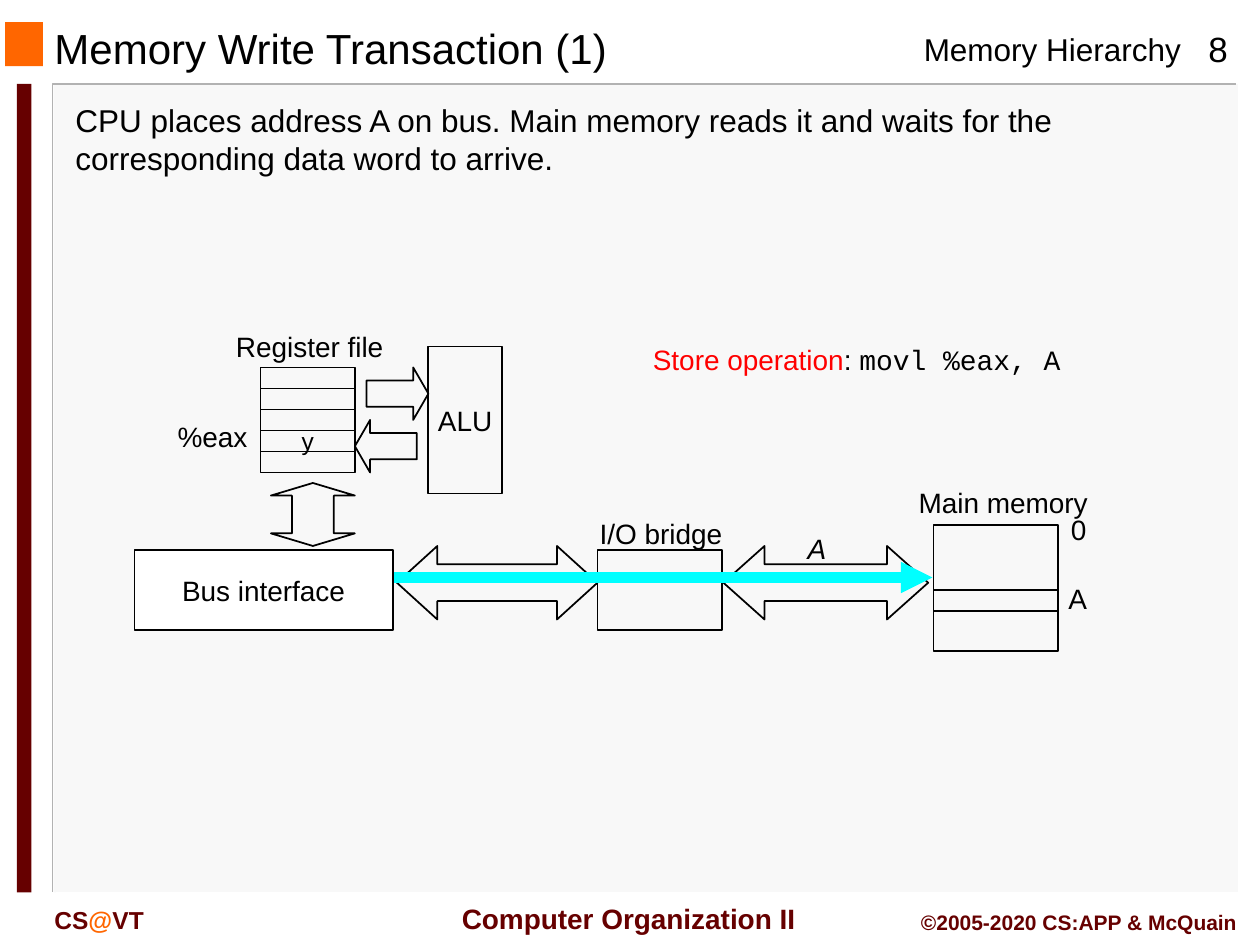
from dataclasses import dataclass
from typing import Optional

import pptx
import pptx.dml.color
import pptx.enum.shapes
import pptx.enum.text
import pptx.oxml
import pptx.oxml.ns
import pptx.util

COLORS = {"black": "000000", "white": "FFFFFF", "panel": "F8F8F8", "edge": "B2B2B2",
          "orange": "FF6600", "maroon": "660000", "red": "FF0000", "signal": "00FFFF"}
KIND = pptx.enum.shapes.MSO_SHAPE
ALIGN = pptx.enum.text.PP_ALIGN
ANCHOR = pptx.enum.text.MSO_ANCHOR

deck = pptx.Presentation()
deck.slide_width = pptx.util.Inches(10)
deck.slide_height = pptx.util.Inches(7.5)
slide = deck.slides.add_slide(deck.slide_layouts[6])

# The grid has 120 columns and 90 rows
COLUMN = deck.slide_width / 120
ROW = deck.slide_height / 90


@dataclass(frozen=True)
class Area:
    col: float
    row: float
    cols: float
    rows: float

    def emu(self) -> tuple[int, ...]:
        return (round(self.col * COLUMN), round(self.row * ROW),
                round(self.cols * COLUMN), round(self.rows * ROW))


@dataclass(frozen=True)
class Run:
    text: str
    size: float = 16
    color: str = "black"
    bold: bool = False
    italic: bool = False
    font: str = "Arial"


@dataclass(frozen=True)
class Label:
    area: Area
    runs: tuple[Run, ...]
    align: ALIGN = ALIGN.CENTER
    anchor: ANCHOR = ANCHOR.MIDDLE
    wrap: bool = False


@dataclass(frozen=True)
class Block:
    area: Area
    kind: KIND = KIND.RECTANGLE
    fill: Optional[str] = None
    line: Optional[str] = "black"
    adjust: tuple[float, ...] = ()
    caption: Optional[Run] = None


def rgb(name: str) -> pptx.dml.color.RGBColor:
    return pptx.dml.color.RGBColor.from_string(COLORS[name])


def paint(part, fill: Optional[str], line: Optional[str]) -> None:
    part.shadow.inherit = False
    if fill:
        part.fill.solid()
        part.fill.fore_color.rgb = rgb(fill)
    else:
        part.fill.background()
    if line:
        part.line.color.rgb = rgb(line)
        part.line.width = pptx.util.Pt(1)
    else:
        part.line.fill.background()


def write(frame, label: Label) -> None:
    frame.word_wrap = label.wrap
    frame.vertical_anchor = label.anchor
    paragraph = frame.paragraphs[0]
    paragraph.alignment = label.align
    for item in label.runs:
        run = paragraph.add_run()
        run.text = item.text
        run.font.name = item.font
        run.font.size = pptx.util.Pt(item.size)
        run.font.bold = item.bold
        run.font.italic = item.italic
        run.font.color.rgb = rgb(item.color)


def draw_label(label: Label) -> None:
    write(slide.shapes.add_textbox(*label.area.emu()).text_frame, label)


def draw_block(block: Block) -> None:
    part = slide.shapes.add_shape(block.kind, *block.area.emu())
    for index, value in enumerate(block.adjust):
        part.adjustments[index] = value
    if len(block.adjust) > 1:
        # python-pptx names both guides of the up-down arrow adj1
        guides = part._element.spPr.iter(pptx.oxml.ns.qn("a:gd"))
        for number, guide in enumerate(guides, start=1):
            guide.set("name", f"adj{number}")
    paint(part, block.fill, block.line)
    if block.caption:
        write(part.text_frame, Label(block.area, (block.caption,)))


def draw_edge(points: list[tuple[float, float]], color: str) -> None:
    corners = [(round(col * COLUMN), round(row * ROW)) for col, row in points]
    builder = slide.shapes.build_freeform(*corners[0])
    builder.add_line_segments(corners[1:], close=False)
    paint(builder.convert_to_shape(), None, color)


def draw_signal(start: tuple[float, float], end: tuple[float, float]) -> None:
    signal = slide.shapes.add_connector(
        pptx.enum.shapes.MSO_CONNECTOR.STRAIGHT,
        round(start[0] * COLUMN), round(start[1] * ROW),
        round(end[0] * COLUMN), round(end[1] * ROW))
    signal.line.color.rgb = rgb("signal")
    signal.line.width = pptx.util.Pt(6)
    namespace = pptx.oxml.ns.nsdecls("a")
    signal.line._get_or_add_ln().append(
        pptx.oxml.parse_xml(f'<a:tailEnd {namespace} type="triangle"/>'))
    signal._element.spPr.append(pptx.oxml.parse_xml(f"<a:effectLst {namespace}/>"))


# Page frame
draw_block(Block(Area(5.1, 8, 112.8, 77), fill="panel", line=None))
draw_edge([(117.7, 8), (5, 8), (5, 85)], "edge")
draw_edge([(118, 8), (118, 85), (5.3, 85)], "white")
draw_block(Block(Area(0.5, 2.1, 3.6, 4.2), fill="orange", line=None))
draw_block(Block(Area(1.6, 8, 1.4, 77), fill="maroon", line=None))

# Header, footer and body text
PAGE_TEXTS = [
    Label(Area(86.8, 2.3, 27.1, 4.8), (Run("Memory Hierarchy", 18),), ALIGN.LEFT, ANCHOR.TOP),
    Label(Area(112, 2, 8, 5.2), (Run("8", 20),), ALIGN.CENTER, ANCHOR.TOP, True),
    Label(Area(41.8, 85.3, 35.4, 4.4), (Run(" Computer Organization II", 16, "maroon", True),)),
    Label(Area(4, 85.6, 18, 4),
          (Run("CS", 14, "maroon", True), Run("@", 14, "orange", True),
           Run("VT", 14, "maroon", True)), ALIGN.LEFT, ANCHOR.TOP, True),
    Label(Area(86, 86, 33, 3.6), (Run("©2005-2020 CS:APP & McQuain", 12, "maroon", True),),
          ALIGN.RIGHT, ANCHOR.TOP, True),
    Label(Area(4, 2.2, 76, 4.6), (Run("Memory Write Transaction (1)", 24),),
          ALIGN.LEFT, ANCHOR.MIDDLE, True),
    Label(Area(6, 9, 111, 8.5),
          (Run("CPU places address A on bus. Main memory reads it and waits for the "
               "corresponding data word to arrive.", 18),), ALIGN.LEFT, ANCHOR.TOP, True),
    Label(Area(61, 32, 41.6, 7.7),
          (Run("Store operation", color="red"), Run(": "),
           Run("movl %eax, A", font="Courier New")), ALIGN.LEFT, ANCHOR.TOP),
]
for page_text in PAGE_TEXTS:
    draw_label(page_text)

# Buses and bridge
draw_block(Block(Area(68.9, 52, 19.5, 7), KIND.LEFT_RIGHT_ARROW, adjust=(0.5, 0.56)))
draw_block(Block(Area(56.9, 52.4, 11.9, 7.6)))
draw_block(Block(Area(37.8, 52, 19.1, 7), KIND.LEFT_RIGHT_ARROW, adjust=(0.5, 0.55)))

# Register file: five equal rows, the fourth is %eax
for index, content in enumerate([None, None, None, "y", None]):
    draw_block(Block(Area(24.8, 35 + 2 * index, 9, 2),
                     caption=Run(content, 14) if content else None))

# CPU data paths and ALU
draw_block(Block(Area(34.9, 35, 5.9, 5), KIND.RIGHT_ARROW, adjust=(0.5, 0.29)))
draw_block(Block(Area(33.8, 40, 5.9, 5), KIND.LEFT_ARROW, adjust=(0.5, 0.29)))
draw_block(Block(Area(40.8, 33, 7, 14), caption=Run("ALU")))
draw_block(Block(Area(25.8, 46, 8, 6), KIND.UP_DOWN_ARROW, adjust=(0.5, 0.2)))

# Address travelling from the bus interface to memory
draw_signal((36.8, 55), (88.8, 55))
draw_block(Block(Area(12.8, 52.4, 24.6, 7.6), fill="white", caption=Run("Bus interface")))

# Main memory with the word at A
draw_block(Block(Area(88.9, 50, 11.9, 12)))
draw_block(Block(Area(88.9, 56.2, 11.9, 2)))

# Diagram labels
DIAGRAM_LABELS = [
    (Area(21.1, 30.8, 16.8, 4.4), Run("Register file")),
    (Area(75.7, 50, 4.2, 4.4), Run("A", italic=True)),
    (Area(86.2, 45.6, 18.7, 4.4), Run("Main memory")),
    (Area(100.8, 48.2, 3.8, 4.4), Run("0")),
    (Area(100.5, 54.8, 4.3, 4.4), Run("A")),
    (Area(15.7, 39.4, 9.1, 4.4), Run("%eax")),
    (Area(55.8, 48.6, 14.3, 4.4), Run("I/O bridge")),
]
for area, name in DIAGRAM_LABELS:
    draw_label(Label(area, (name,)))

deck.save("out.pptx")
